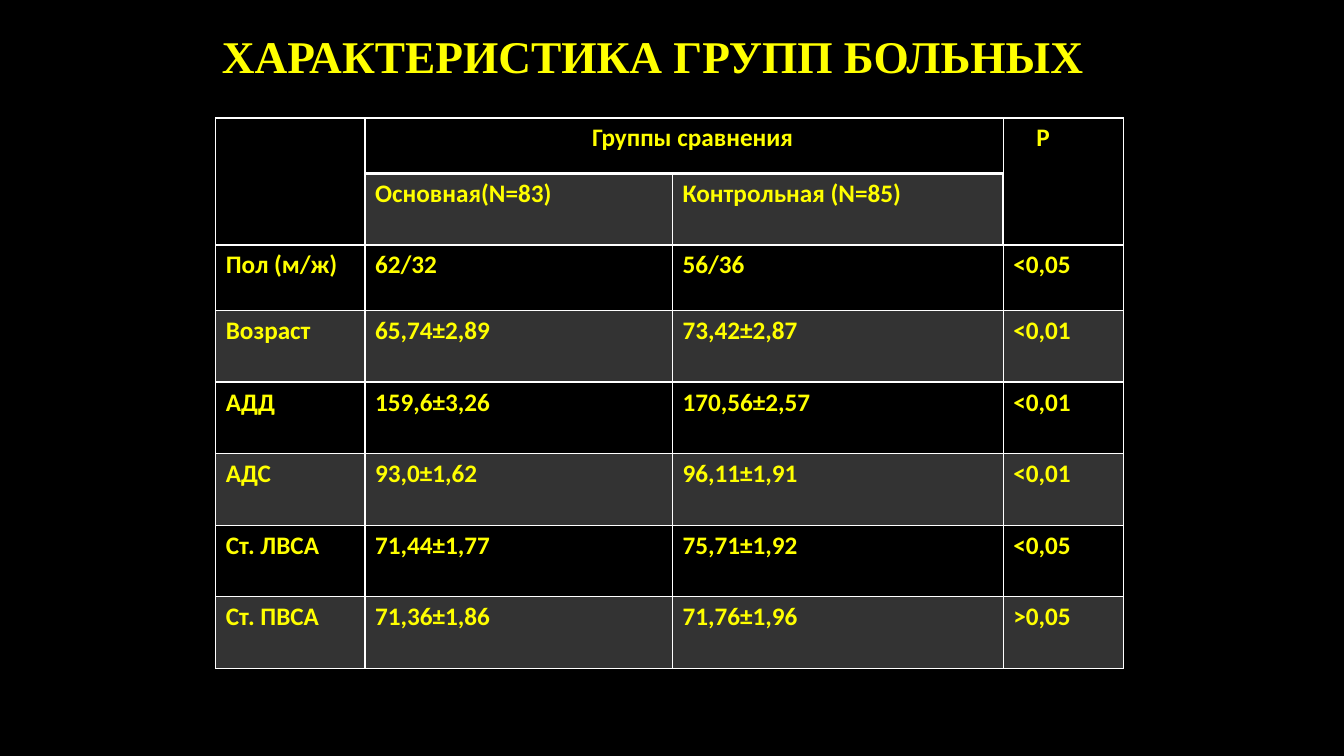
from dataclasses import dataclass

from lxml import etree
from pptx import Presentation
from pptx.dml.color import RGBColor
from pptx.enum.text import MSO_ANCHOR, PP_ALIGN
from pptx.oxml.ns import qn
from pptx.util import Inches, Pt

LEFT, CENTER = PP_ALIGN.LEFT, PP_ALIGN.CENTER
MIDDLE = MSO_ANCHOR.MIDDLE
TITLE_ONLY = 5
BLACK, YELLOW, WHITE = "000000", "FFFF00", "FFFFFF"
BAND_OPACITY = 20
THIN, THICK = 1, 2

COLUMN_WIDTHS = (1.48, 3.05, 3.28, 1.19)
ROW_HEIGHTS = (0.55, 0.71, 0.65) + (0.71,) * 5
MERGES = (((0, 0), (1, 0)), ((0, 1), (0, 2)), ((0, 3), (1, 3)))
THICK_EDGES = {
    (0, 0): "B", (0, 1): "B", (0, 3): "B",
    (1, 1): "LT", (1, 2): "TR",
    (2, 0): "T", (2, 3): "T",
}


@dataclass
class Row:
    label: str
    main: str
    control: str
    p_value: str


ROWS = (
    Row("", "Группы сравнения", "", "P"),
    Row("", "Основная(N=83)", "Контрольная (N=85)", ""),
    Row("Пол (м/ж)", "62/32", "56/36", "<0,05"),
    Row("Возраст", "65,74±2,89", "73,42±2,87", "<0,01"),
    Row("АДД", "159,6±3,26", "170,56±2,57", "<0,01"),
    Row("АДС", "93,0±1,62", "96,11±1,91", "<0,01"),
    Row("Ст. ЛВСА", "71,44±1,77", "75,71±1,92", "<0,05"),
    Row("Ст. ПВСА", "71,36±1,86", "71,76±1,96", ">0,05"),
)


def color(value: str) -> RGBColor:
    return RGBColor.from_string(value)


def write(text_frame, text: str, *, size: float = 18, font: str = "Calibri",
          align=LEFT) -> None:
    paragraph = text_frame.paragraphs[0]
    paragraph.alignment = align
    run = paragraph.add_run()
    run.text = text
    run.font.name = font
    run.font.size = Pt(size)
    run.font.bold = True
    run.font.color.rgb = color(YELLOW)


def draw_borders(cell, thick_edges: str) -> None:
    properties = cell._tc.get_or_add_tcPr()
    for edge in "LRTB":
        width = THICK if edge in thick_edges else THIN
        line = etree.SubElement(properties, qn(f"a:ln{edge}"), w=str(Pt(width)))
        fill = etree.SubElement(line, qn("a:solidFill"))
        etree.SubElement(fill, qn("a:srgbClr"), val=WHITE)


def fill_cell(cell, banded: bool) -> None:
    if not banded:
        cell.fill.background()
        return
    cell.fill.solid()
    cell.fill.fore_color.rgb = color(WHITE)
    fill_color = cell._tc.tcPr.find(qn("a:solidFill")).find(qn("a:srgbClr"))
    etree.SubElement(fill_color, qn("a:alpha"), val=str(BAND_OPACITY * 1000))


def add_title(slide) -> None:
    title = slide.shapes.title
    title.left, title.top = Inches(2.1), Inches(0)
    title.width, title.height = Inches(9.01), Inches(1.09)
    title.text_frame.word_wrap = True
    title.text_frame.vertical_anchor = MIDDLE
    write(title.text_frame, "ХАРАКТЕРИСТИКА ГРУПП БОЛЬНЫХ",
          size=32.4, font="Times New Roman")


def add_patient_table(slide) -> None:
    table = slide.shapes.add_table(
        len(ROWS), len(COLUMN_WIDTHS), Inches(2.14), Inches(1.17),
        Inches(sum(COLUMN_WIDTHS)), Inches(sum(ROW_HEIGHTS))).table
    table.first_row = table.horz_banding = False
    for column, width in zip(table.columns, COLUMN_WIDTHS):
        column.width = Inches(width)
    for table_row, height in zip(table.rows, ROW_HEIGHTS):
        table_row.height = Inches(height)
    for first, last in MERGES:
        table.cell(*first).merge(table.cell(*last))

    for i, row in enumerate(ROWS):
        for j, text in enumerate((row.label, row.main, row.control, row.p_value)):
            cell = table.cell(i, j)
            if cell.is_spanned:
                continue
            draw_borders(cell, THICK_EDGES.get((i, j), ""))
            fill_cell(cell, banded=i % 2 == 1)
            if text:
                write(cell.text_frame, text, align=CENTER if (i, j) == (0, 1) else LEFT)
    table.cell(0, 1).margin_left = Inches(0.27)
    table.cell(0, 3).margin_left = Inches(0.33)


def main() -> None:
    presentation = Presentation()
    presentation.slide_width = Inches(13.33)
    presentation.slide_height = Inches(7.5)
    slide = presentation.slides.add_slide(presentation.slide_layouts[TITLE_ONLY])
    slide.background.fill.solid()
    slide.background.fill.fore_color.rgb = color(BLACK)
    add_title(slide)
    add_patient_table(slide)
    presentation.save("out.pptx")


if __name__ == "__main__":
    main()
